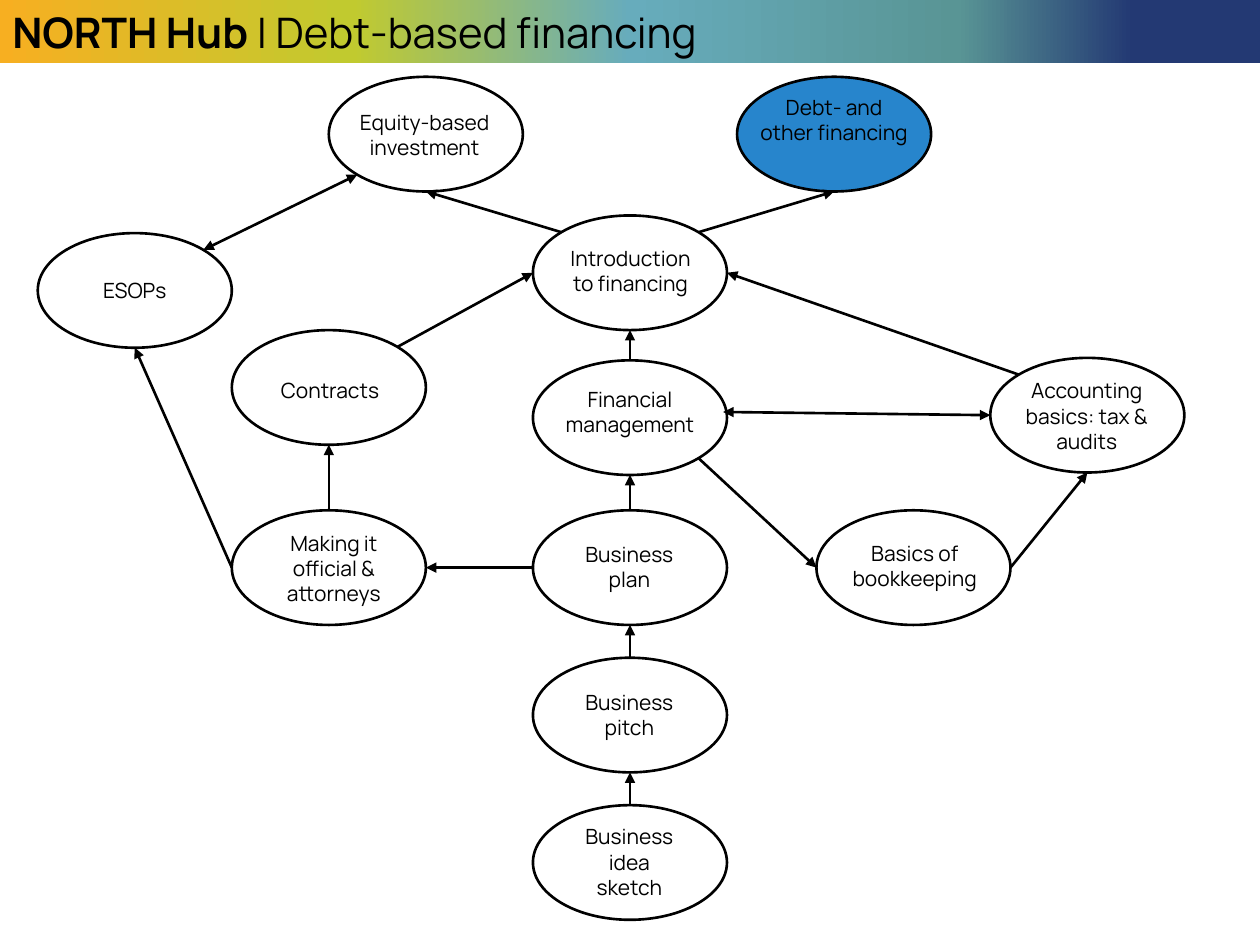
from math import cos, pi, sin

from lxml.etree import SubElement
from pptx import Presentation
from pptx.dml.color import RGBColor
from pptx.enum.shapes import MSO_CONNECTOR, MSO_SHAPE
from pptx.enum.text import MSO_ANCHOR, PP_ALIGN
from pptx.oxml.ns import qn
from pptx.util import Inches, Pt

BLACK = RGBColor(0x00, 0x00, 0x00)
BLUE = RGBColor(0x27, 0x85, 0xCC)
BANNER_STOPS = [
    (0, RGBColor(0xF7, 0xAF, 0x21)),
    (28, RGBColor(0xC1, 0xCA, 0x2F)),
    (50, RGBColor(0x67, 0xAC, 0xBC)),
    (76, RGBColor(0x59, 0x95, 0x95)),
    (90, RGBColor(0x23, 0x39, 0x73)),
]
FONT = "Manrope"
NODE_WIDTH, NODE_HEIGHT = 1.54, 0.91
LINE_HEIGHT, LABEL_PADDING = 0.2, 0.1
COLUMN = 4.23

NODES = {
    "idea": (COLUMN, 6.39),
    "pitch": (COLUMN, 5.22),
    "plan": (COLUMN, 4.05),
    "management": (COLUMN, 2.86),
    "introduction": (COLUMN, 1.71),
    "bookkeeping": (6.48, 4.05),
    "official": (1.84, 4.05),
    "accounting": (7.86, 2.84),
    "contracts": (1.84, 2.62),
    "equity": (2.61, 0.61),
    "debt": (5.85, 0.61),
    "esops": (0.3, 1.85),
}
LABELS = [
    ("Business idea sketch", 4.5, 6.49, 0.99, 3),
    ("Business pitch", 4.5, 5.42, 0.99, 2),
    ("Business plan", 4.5, 4.25, 0.99, 2),
    ("Financial management", 4.26, 3.02, 1.48, 2),
    ("Introduction to financing", 4.37, 1.9, 1.27, 2),
    ("Basics of bookkeeping", 6.59, 4.24, 1.34, 2),
    ("Making it official & attorneys", 2.1, 4.16, 1.1, 3),
    ("Accounting basics: tax & audits", 7.99, 2.95, 1.27, 3),
    ("Contracts", 1.99, 2.95, 1.26, 1),
    ("Equity-based\ninvestment", 2.67, 0.82, 1.4, 2),
    ("Debt- and other financing", 5.92, 0.7, 1.4, 3),
    ("ESOPs", 0.44, 2.15, 1.26, 1),
]
ANGLES = {
    "right": 0,
    "bottom right": 45,
    "bottom": 90,
    "bottom left": 135,
    "left": 180,
    "top left": 225,
    "top": 270,
    "top right": 315,
}
ARROWS = [
    ("idea", "top", "pitch", "bottom", False),
    ("pitch", "top", "plan", "bottom", False),
    ("plan", "top", "management", "bottom", False),
    ("management", "top", "introduction", "bottom", False),
    ("introduction", "top right", "debt", "bottom", False),
    ("introduction", "top left", "equity", "bottom", False),
    ("plan", "left", "official", "right", False),
    ("management", "bottom right", "bookkeeping", "left", False),
    ("bookkeeping", "right", "accounting", "bottom", False),
    ("official", "top", "contracts", "bottom", False),
    ("official", "left", "esops", "bottom", False),
    ("contracts", "top right", "introduction", "left", False),
    ("accounting", "top left", "introduction", "right", False),
    ("accounting", "left", "management", "right", True),
    ("equity", "bottom left", "esops", "top right", True),
]


def style_span(span, size, bold=False):
    span.font.name = FONT
    span.font.size = Pt(size)
    span.font.bold = bold
    span.font.color.rgb = BLACK


def add_banner(page, left, top, width, height):
    banner = page.shapes.add_shape(
        MSO_SHAPE.RECTANGLE, Inches(left), Inches(top), Inches(width), Inches(height)
    )
    banner.shadow.inherit = False
    banner.line.fill.background()
    banner.fill.gradient()
    banner.fill.gradient_angle = 0
    stops = banner._element.spPr.find(qn("a:gradFill")).find(qn("a:gsLst"))
    for stop in list(stops):
        stops.remove(stop)
    for position, color in BANNER_STOPS:
        stop = SubElement(stops, qn("a:gs"), pos=str(position * 1000))
        SubElement(stop, qn("a:srgbClr"), val=str(color))
    frame = banner.text_frame
    frame.vertical_anchor = MSO_ANCHOR.MIDDLE
    para = frame.paragraphs[0]
    para.alignment = PP_ALIGN.LEFT
    for text, bold in [("NORTH Hub ", True), ("| Debt-based financing", False)]:
        span = para.add_run()
        span.text = text
        style_span(span, 24, bold)


def add_node(page, left, top, color=None):
    node = page.shapes.add_shape(
        MSO_SHAPE.OVAL, Inches(left), Inches(top), Inches(NODE_WIDTH), Inches(NODE_HEIGHT)
    )
    node.shadow.inherit = False
    if color is None:
        node.fill.background()
    else:
        node.fill.solid()
        node.fill.fore_color.rgb = color
    node.line.color.rgb = BLACK
    node.line.width = Pt(1.5)


def add_label(page, text, left, top, width, lines):
    height = lines * LINE_HEIGHT + LABEL_PADDING
    box = page.shapes.add_textbox(Inches(left), Inches(top), Inches(width), Inches(height))
    frame = box.text_frame
    frame.word_wrap = True
    frame.text = text
    for para in frame.paragraphs:
        para.alignment = PP_ALIGN.CENTER
        style_span(para.runs[0], 12)


def rim_point(name, side):
    left, top = NODES[name]
    angle = ANGLES[side] * pi / 180
    return (
        Inches(left + NODE_WIDTH / 2 * (1 + cos(angle))),
        Inches(top + NODE_HEIGHT / 2 * (1 + sin(angle))),
    )


def add_arrow(page, start, start_side, end, end_side, two_way):
    arrow = page.shapes.add_connector(
        MSO_CONNECTOR.STRAIGHT, *rim_point(start, start_side), *rim_point(end, end_side)
    )
    if (start, end) == ("accounting", "management"):
        arrow.end_x, arrow.end_y = Inches(5.74), Inches(3.27)
    arrow.line.color.rgb = BLACK
    arrow.line.width = Pt(1.5)
    properties = arrow._element.spPr
    line = properties.find(qn("a:ln"))
    if two_way:
        SubElement(line, qn("a:headEnd"), type="triangle")
    SubElement(line, qn("a:tailEnd"), type="triangle")
    SubElement(properties, qn("a:effectLst"))


def add_course_map(page):
    for name, (left, top) in NODES.items():
        add_node(page, left, top, BLUE if name == "debt" else None)
    for arrow in ARROWS:
        add_arrow(page, *arrow)
    for label in LABELS:
        add_label(page, *label)


def main():
    deck = Presentation()
    deck.slide_width, deck.slide_height = Inches(10), Inches(7.5)
    page = deck.slides.add_slide(deck.slide_layouts[6])
    add_banner(page, 0, 0, 10, 0.5)
    add_course_map(page)
    deck.save("out.pptx")


if __name__ == "__main__":
    main()
